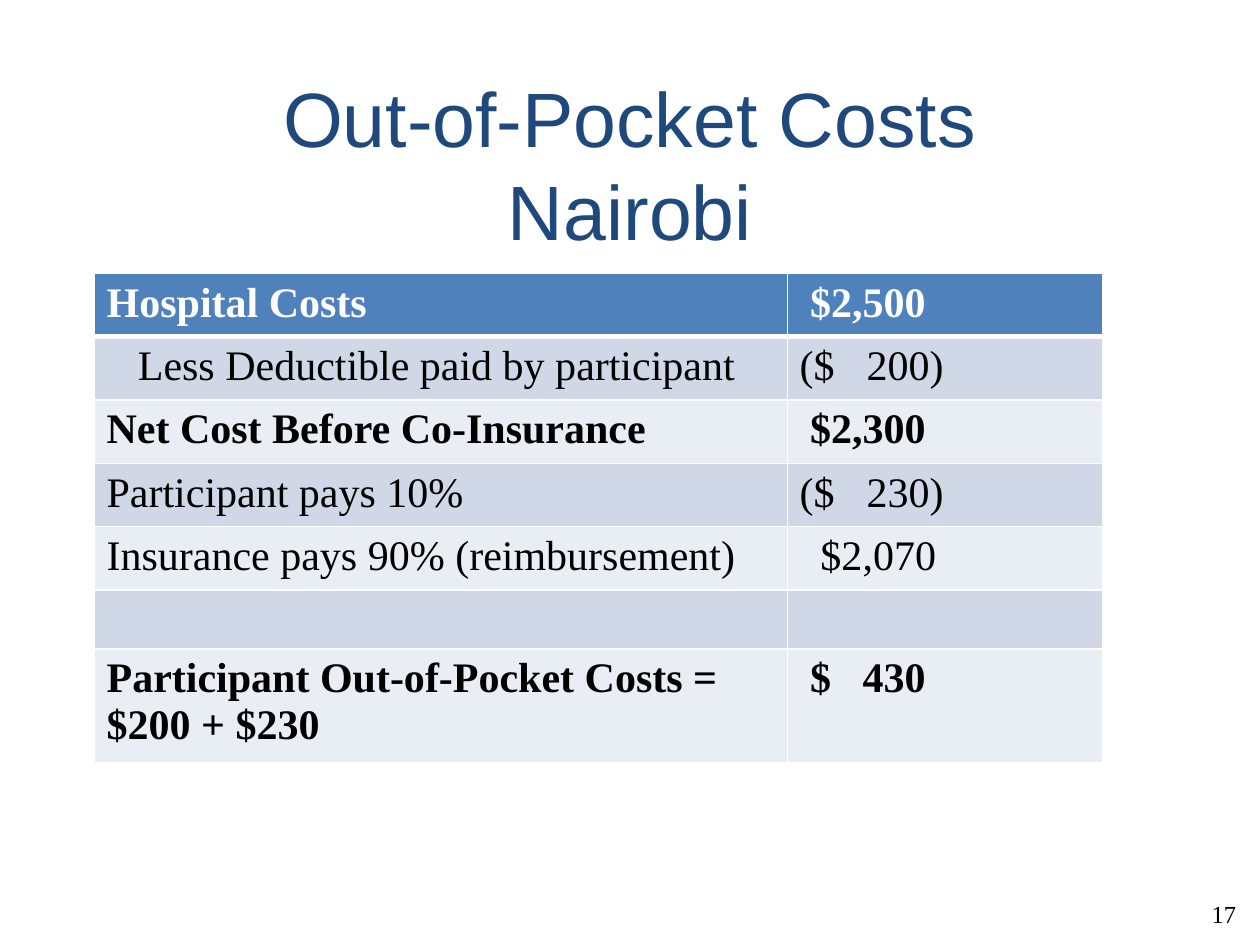
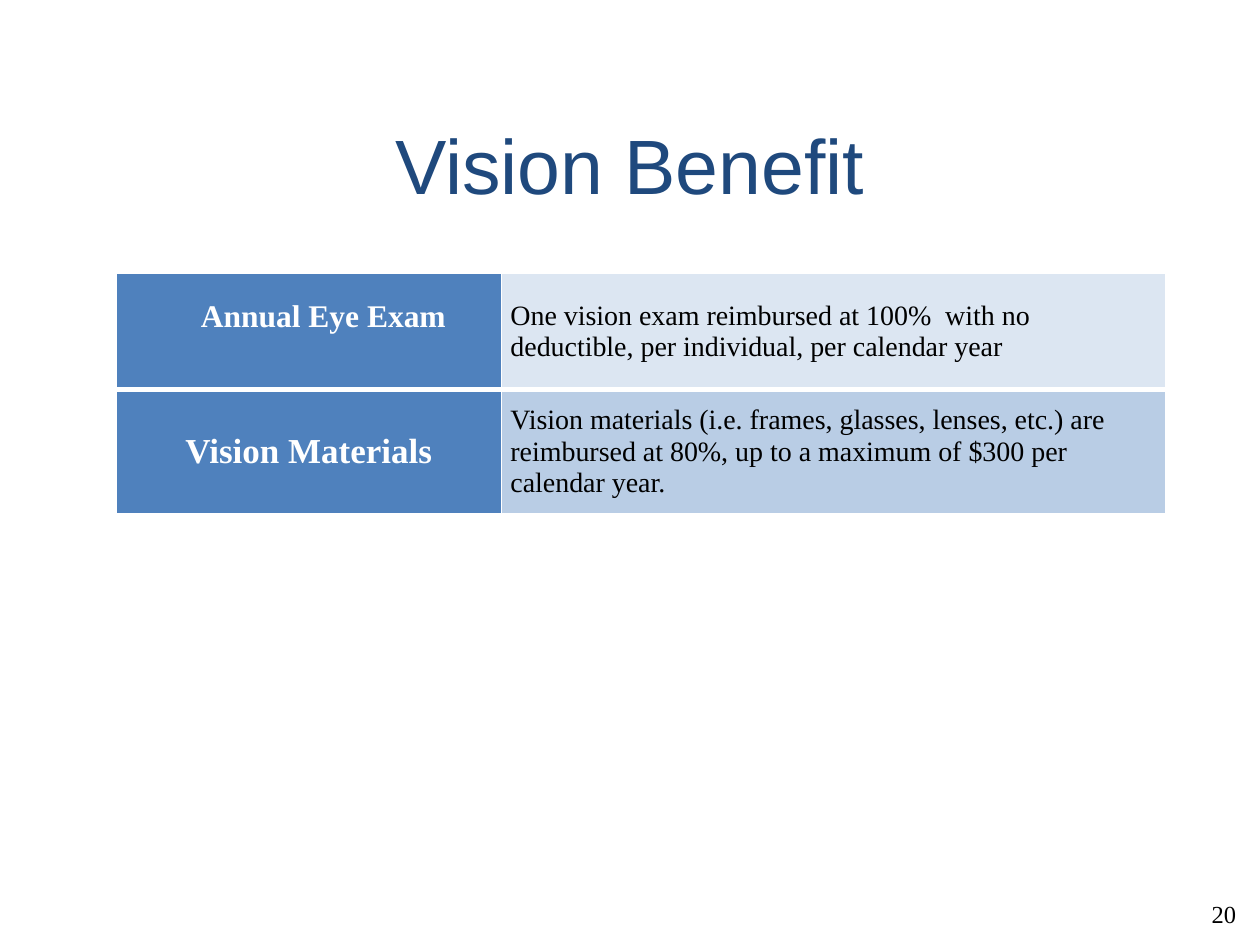
from dataclasses import dataclass
from typing import Any

from lxml.etree import SubElement
from pptx import Presentation
from pptx.dml.color import RGBColor
from pptx.enum.text import MSO_ANCHOR as Anchor, MSO_AUTO_SIZE as AutoSize, PP_ALIGN as Align
from pptx.oxml.ns import qn
from pptx.util import Cm, Pt

NAVY = RGBColor(0x1F, 0x49, 0x7D)
BLUE = RGBColor(0x4F, 0x81, 0xBD)
BAND_DARK = RGBColor(0xD0, 0xD8, 0xE8)
BAND_LIGHT = RGBColor(0xE9, 0xED, 0xF4)
EXAM_FILL = RGBColor(0xDC, 0xE6, 0xF2)
MATERIALS_FILL = RGBColor(0xB9, 0xCD, 0xE5)
WHITE = RGBColor(0xFF, 0xFF, 0xFF)
BLACK = RGBColor(0, 0, 0)

SERIF = "Times New Roman"
TITLE_FONT = {"name": "Arial", "size": Pt(44), "bold": False}
NUMBER_FONT = {"name": SERIF, "size": Pt(14)}
TABLE_TOP = Cm(5.51)
SPACE = 0.21  # width in cm of one space at the cost table's text size
COST_ROW = Cm(1.04)
EMPTY_ROW = Cm(1.19)
COST_MARGINS = {"margin_left": Cm(0.25), "margin_right": Cm(0.25),
                "margin_top": Cm(0.13), "margin_bottom": Cm(0.13)}
BENEFIT_MARGINS = {"margin_left": Cm(0.18), "margin_right": Cm(0.18),
                   "margin_top": 0, "margin_bottom": 0,
                   "vertical_anchor": Anchor.MIDDLE}


@dataclass
class TableCell:
    text: str
    fill: RGBColor
    size: int
    bold: bool
    color: RGBColor
    layout: dict[str, Any]
    align: Align = Align.LEFT
    indent: float = 0
    tab: float = 0


@dataclass
class TableSpec:
    left: Cm
    columns: list[Cm]
    rows: list[Cm]
    cells: list[list[TableCell]]


@dataclass
class CostLine:
    label: str
    amount: str
    bold: bool = False
    label_indent: float = 0
    amount_indent: float = 0
    tab: float = 0


COST_LINES = [
    CostLine("Hospital Costs", "$2,500", True, amount_indent=SPACE),
    CostLine("Less Deductible paid by participant", "($\t200)",
             label_indent=3 * SPACE, tab=1.35),
    CostLine("Net Cost Before Co-Insurance", "$2,300", True, amount_indent=SPACE),
    CostLine("Participant pays 10%", "($\t230)", tab=1.35),
    CostLine("Insurance pays 90% (reimbursement)", "$2,070", amount_indent=2 * SPACE),
    CostLine("", ""),
    CostLine("Participant Out-of-Pocket Costs = $200 + $230", "$\t430", True,
             amount_indent=SPACE, tab=1.27),
]


def set_values(target: Any, values: dict[str, Any]) -> None:
    for name, value in values.items():
        setattr(target, name, value)


def format_runs(paragraph: Any, values: dict[str, Any], color: RGBColor) -> None:
    for run in paragraph.runs:
        set_values(run.font, values)
        run.font.color.rgb = color


def set_borders(cell: Any, top: int, bottom: int) -> None:
    """Draw white borders; widths are in points and the sides are 1 point."""
    properties = cell._tc.get_or_add_tcPr()
    widths = {"a:lnL": 1, "a:lnR": 1, "a:lnT": top, "a:lnB": bottom}
    for position, (tag, width) in enumerate(widths.items()):
        line = SubElement(properties, qn(tag), w=str(Pt(width)))
        fill = SubElement(line, qn("a:solidFill"))
        SubElement(fill, qn("a:srgbClr"), val=str(WHITE))
        properties.insert(position, line)


def fill_cell(cell: Any, content: TableCell) -> None:
    set_values(cell, content.layout)
    cell.fill.solid()
    cell.fill.fore_color.rgb = content.fill
    if not content.text:
        return
    cell.text = content.text
    paragraph = cell.text_frame.paragraphs[0]
    paragraph.alignment = content.align
    properties = paragraph._p.get_or_add_pPr()
    if content.indent:
        properties.set("indent", str(Cm(content.indent)))
    if content.tab:
        tabs = SubElement(properties, qn("a:tabLst"))
        SubElement(tabs, qn("a:tab"), pos=str(Cm(content.tab)), algn="l")
    format_runs(paragraph, {"name": SERIF, "size": Pt(content.size),
                            "bold": content.bold}, content.color)


def add_table(slide: Any, spec: TableSpec) -> None:
    table = slide.shapes.add_table(
        len(spec.rows), len(spec.columns), spec.left, TABLE_TOP,
        sum(spec.columns), sum(spec.rows)).table
    set_values(table, {"first_row": False, "horz_banding": False})
    for column, width in zip(table.columns, spec.columns):
        column.width = width
    for row_index, (row, height) in enumerate(zip(table.rows, spec.rows)):
        row.height = height
        for cell, content in zip(row.cells, spec.cells[row_index]):
            fill_cell(cell, content)
            set_borders(cell, top=3 if row_index == 1 else 1,
                        bottom=3 if row_index == 0 else 1)


def add_titled_slide(presentation: Any, title_text: str, number: str) -> Any:
    slide = presentation.slides.add_slide(presentation.slide_layouts[5])
    title = slide.shapes.title
    set_values(title, {"left": Cm(1.9), "top": Cm(1.7),
                       "width": Cm(21.6), "height": Cm(3.18)})
    title.text_frame.text = title_text
    set_values(title.text_frame, {"auto_size": AutoSize.NONE, "word_wrap": True,
                                  "vertical_anchor": Anchor.MIDDLE})
    title_paragraph = title.text_frame.paragraphs[0]
    title_paragraph.alignment = Align.CENTER
    format_runs(title_paragraph, TITLE_FONT, NAVY)

    frame = slide.shapes.add_textbox(Cm(24.08), Cm(18), Cm(1.09), Cm(0.84)).text_frame
    frame.text = number
    set_values(frame, {"word_wrap": False, "auto_size": AutoSize.SHAPE_TO_FIT_TEXT,
                       "vertical_anchor": Anchor.MIDDLE})
    frame.paragraphs[0].alignment = Align.RIGHT
    format_runs(frame.paragraphs[0], NUMBER_FONT, BLACK)
    return slide


def cost_cells(index: int, line: CostLine) -> list[TableCell]:
    bands = (BAND_LIGHT, BAND_DARK)
    fill, color = (BLUE, WHITE) if index == 0 else (bands[index % 2], BLACK)
    style = (fill, 24, line.bold, color, COST_MARGINS)
    return [TableCell(line.label, *style, indent=line.label_indent),
            TableCell(line.amount, *style, indent=line.amount_indent, tab=line.tab)]


def benefit_cells(name: str, size: int, detail: str, fill: RGBColor,
                  name_margins: dict[str, Any]) -> list[TableCell]:
    return [TableCell(name, BLUE, size, True, WHITE,
                      BENEFIT_MARGINS | name_margins, Align.CENTER),
            TableCell(detail, fill, 16, False, BLACK, BENEFIT_MARGINS)]


def main() -> None:
    presentation = Presentation()
    presentation.slide_width, presentation.slide_height = Cm(25.4), Cm(19.05)

    costs_slide = add_titled_slide(presentation, "Out-of-Pocket Costs\vNairobi", "17")
    add_table(costs_slide, TableSpec(
        Cm(1.9), [Cm(13.97), Cm(6.35)],
        [COST_ROW if line.label else EMPTY_ROW for line in COST_LINES],
        [cost_cells(index, line) for index, line in enumerate(COST_LINES)]))

    vision_slide = add_titled_slide(presentation, "Vision Benefit", "20")
    add_table(vision_slide, TableSpec(
        Cm(2.34), [Cm(7.77), Cm(13.39)], [Cm(2.34), Cm(2.51)],
        [benefit_cells("Annual Eye Exam", 18,
                       "One vision exam reimbursed at 100%  with no deductible, "
                       "per individual, per calendar year", EXAM_FILL,
                       {"margin_left": Cm(0.77), "margin_bottom": Cm(0.6)}),
         benefit_cells("Vision Materials", 20,
                       "Vision materials (i.e. frames, glasses, lenses, etc.) are "
                       "reimbursed at 80%, up to a maximum of $300 per calendar year.",
                       MATERIALS_FILL, {})]))

    presentation.save("out.pptx")


if __name__ == "__main__":
    main()
